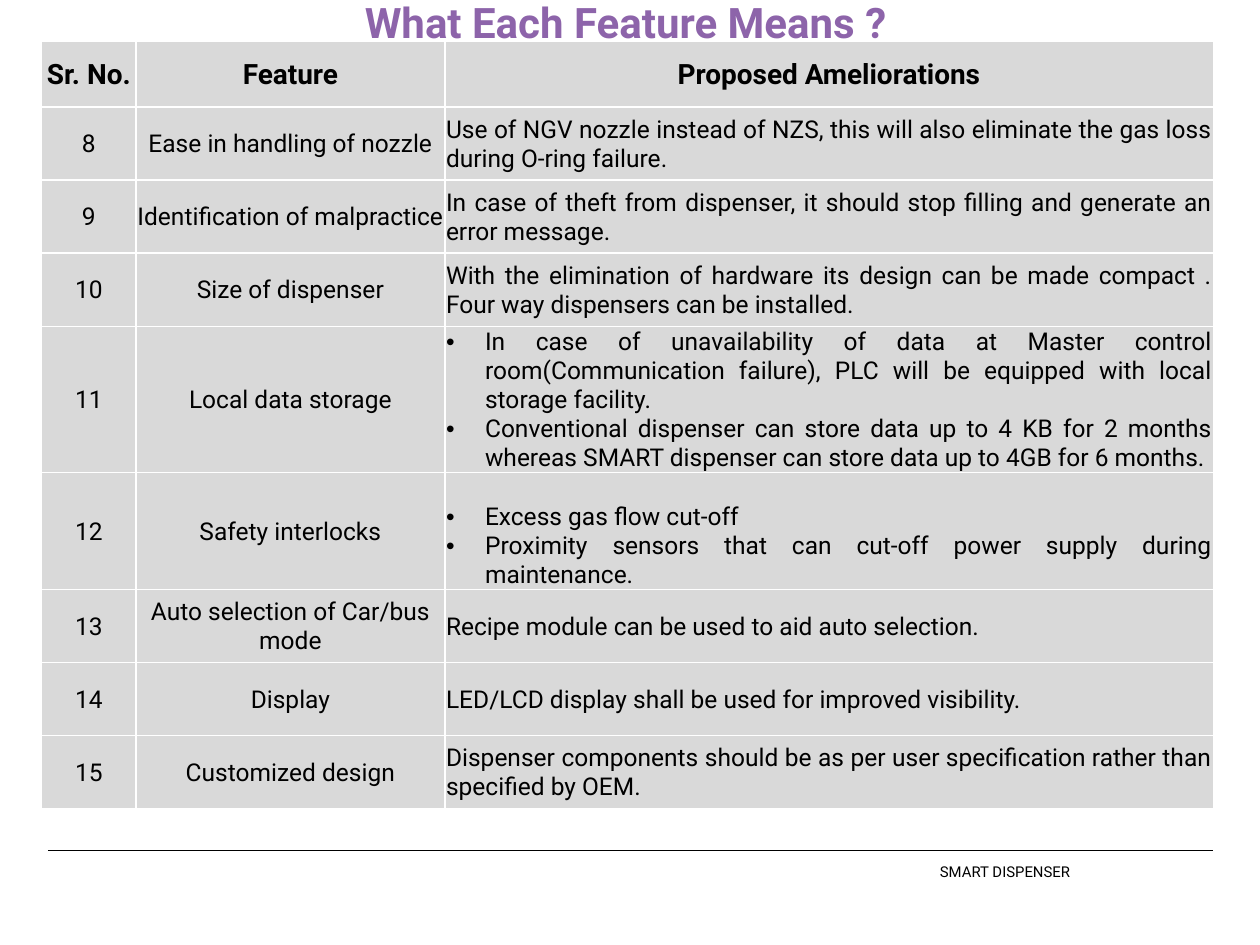
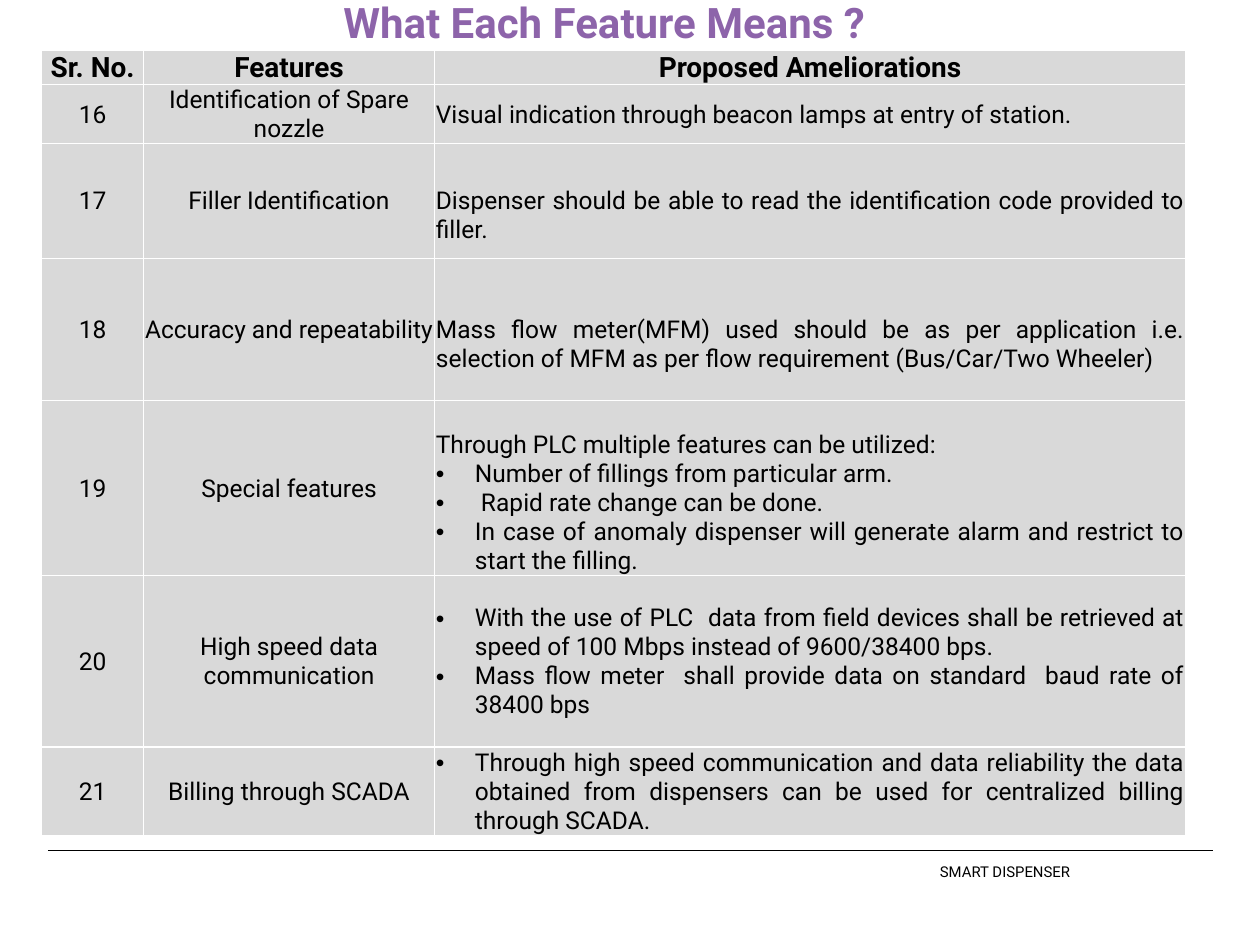
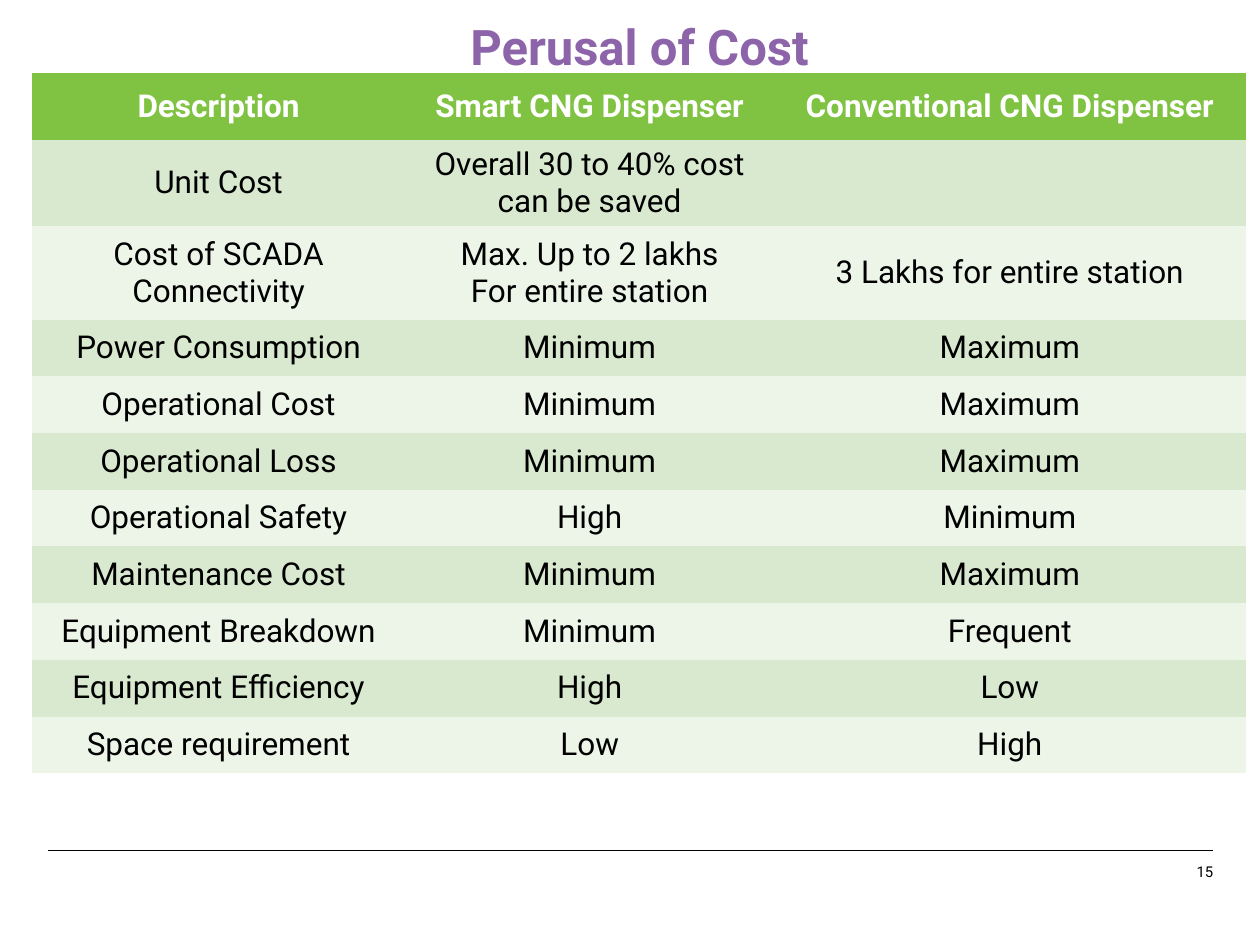
from lxml import etree
from pptx import Presentation
from pptx.dml.color import RGBColor
from pptx.enum import text
from pptx.oxml.ns import qn
from pptx.util import Inches, Pt

FONT = "Roboto"
BLACK, WHITE, PURPLE = "000000", "FFFFFF", "8D64AA"
GREY, GREEN, GREEN_BANDS = "D9D9D9", "80C342", ("D8E9CF", "EDF5E9")
NO_STYLE = "{2D5ABB26-0587-4C30-8999-92F81FD0307C}"
BULLET = "• "
BLANK_LINE = 0.23
CENTER, RIGHT, LEFT = text.PP_ALIGN.CENTER, text.PP_ALIGN.RIGHT, text.PP_ALIGN.LEFT
JUSTIFY = text.PP_ALIGN.JUSTIFY

# Each row: height, number, feature, amelioration, lines the amelioration is lowered by
FEATURES_8_TO_15 = [
    (0.52, "Sr. No.", "Feature", "Proposed Ameliorations", 0),
    (0.58, "8", "Ease in handling of nozzle",
     "Use of NGV nozzle instead of NZS, this will also eliminate the gas loss "
     "during O-ring failure.", 0),
    (0.58, "9", "Identification of malpractice",
     "In case of theft from dispenser, it should stop filling and generate an "
     "error message.", 0),
    (0.58, "10", "Size of dispenser",
     "With the elimination of hardware its design can be made compact . "
     "Four way dispensers can be installed.", 0),
    (1.16, "11", "Local data storage",
     "• In case of unavailability of data at Master control room(Communication "
     "failure), PLC will be equipped with local storage facility.\n"
     "• Conventional dispenser can store data up to 4 KB for 2 months whereas "
     "SMART dispenser can store data up to 4GB for 6 months.", 0),
    (0.93, "12", "Safety interlocks",
     "• Excess gas flow cut-off\n"
     "• Proximity sensors that can cut-off power supply during maintenance.", 1),
    (0.58, "13", "Auto selection of Car/bus mode",
     "Recipe module can be used to aid auto selection.", 0),
    (0.58, "14", "Display",
     "LED/LCD display shall be used for improved visibility.", 0),
    (0.58, "15", "Customized design",
     "Dispenser components should be as per user specification rather than "
     "specified by OEM.", 0),
]
FEATURES_16_TO_21 = [
    (0.27, "Sr. No.", "Features", "Proposed Ameliorations", 0),
    (0.46, "16", "Identification of Spare nozzle",
     "Visual indication through beacon lamps at entry of station.", 0),
    (0.91, "17", "Filler Identification",
     "Dispenser should be able to read the identification code provided to "
     "filler.", 1),
    (1.13, "18", "Accuracy and repeatability",
     "Mass flow meter(MFM) used should be as per application i.e. selection of "
     "MFM as per flow requirement (Bus/Car/Two Wheeler)", 1),
    (1.38, "19", "Special features",
     "Through PLC multiple features can be utilized:\n"
     "• Number of fillings from particular arm.\n"
     "•  Rapid rate change can be done.\n"
     "• In case of anomaly dispenser will generate alarm and restrict to start "
     "the filling.", 1),
    (1.36, "20", "High speed data communication",
     "• With the use of PLC  data from field devices shall be retrieved at "
     "speed of 100 Mbps instead of 9600/38400 bps.\n"
     "• Mass flow meter  shall provide data on standard  baud rate of 38400 bps", 0),
    (0.69, "21", "Billing through SCADA",
     "• Through high speed communication and data reliability the data obtained "
     "from dispensers can be used for centralized billing through SCADA.", 0),
]
COSTS = [
    (0.53, "Description", "Smart CNG Dispenser", "Conventional CNG Dispenser"),
    (0.68, "Unit Cost", "Overall 30 to 40% cost can be saved", ""),
    (0.74, "Cost of SCADA Connectivity", "Max. Up to 2 lakhs\nFor entire station",
     "3 Lakhs for entire station"),
    (0.45, "Power Consumption", "Minimum", "Maximum"),
    (0.45, "Operational Cost", "Minimum", "Maximum"),
    (0.45, "Operational Loss", "Minimum", "Maximum"),
    (0.45, "Operational Safety", "High", "Minimum"),
    (0.45, "Maintenance Cost", "Minimum", "Maximum"),
    (0.45, "Equipment Breakdown", "Minimum", "Frequent"),
    (0.45, "Equipment Efficiency", "High", "Low"),
    (0.45, "Space requirement", "Low", "High"),
]


def rgb(color):
    return RGBColor.from_string(color)


def add_bullet(p):
    pPr = p._p.get_or_add_pPr()
    pPr.set("marL", str(Inches(0.31)))
    pPr.set("indent", str(Inches(-0.31)))
    etree.SubElement(pPr, qn("a:buFont"), typeface="Arial")
    etree.SubElement(pPr, qn("a:buChar"), char=BULLET.strip())


def write(tf, content, size, color=BLACK, bold=False, align=CENTER):
    """Fill a text frame, one paragraph a line; a leading bullet makes a list item."""
    for i, line in enumerate(content.split("\n")):
        p = tf.add_paragraph() if i else tf.paragraphs[0]
        p.alignment = align
        if line.startswith(BULLET):
            add_bullet(p)
            line = line[len(BULLET):]
        r = p.add_run()
        r.text = line
        r.font.name, r.font.size, r.font.bold = FONT, Pt(size), bold
        r.font.color.rgb = rgb(color)


def clear_insets(tf):
    tf.margin_left = tf.margin_right = tf.margin_top = tf.margin_bottom = 0


def set_title(slide, title, left, top, width, height, size):
    sp = slide.shapes.title
    sp.left, sp.top = Inches(left), Inches(top)
    sp.width, sp.height = Inches(width), Inches(height)
    tf = sp.text_frame
    clear_insets(tf)
    tf.auto_size = text.MSO_AUTO_SIZE.NONE
    tf.vertical_anchor = text.MSO_ANCHOR.TOP
    write(tf, title, size, PURPLE, bold=True)


def add_footer(slide, label, left, width, align):
    line = slide.shapes.add_connector(1, Inches(0.38), Inches(6.75), Inches(9.63), Inches(6.75))
    line.line.color.rgb = rgb(BLACK)
    line.line.width = Pt(0.25)
    etree.SubElement(line._element.spPr, qn("a:effectLst"))
    box = slide.shapes.add_textbox(Inches(left), Inches(6.85), Inches(width), Inches(0.14))
    tf = box.text_frame
    clear_insets(tf)
    tf.word_wrap = True
    write(tf, label, 8.5, align=align)


def add_table(slide, left, top, widths, heights):
    frame = slide.shapes.add_table(len(heights), len(widths), Inches(left), Inches(top),
                                   Inches(sum(widths)), Inches(sum(heights)))
    table = frame.table
    table._tbl.tblPr.find(qn("a:tableStyleId")).text = NO_STYLE
    for column, width in zip(table.columns, widths):
        column.width = Inches(width)
    for row, height in zip(table.rows, heights):
        row.height = Inches(height)
    return table


def fill_cell(cell, color):
    cell.fill.solid()
    cell.fill.fore_color.rgb = rgb(color)
    cell.vertical_anchor = text.MSO_ANCHOR.MIDDLE


def add_white_borders(cell):
    tcPr = cell._tc.get_or_add_tcPr()
    for i, side in enumerate(("lnL", "lnR", "lnT", "lnB")):
        ln = etree.Element(qn("a:" + side), w=str(Pt(1)))
        fill = etree.SubElement(ln, qn("a:solidFill"))
        etree.SubElement(fill, qn("a:srgbClr"), val=WHITE)
        tcPr.insert(i, ln)


def add_feature_table(slide, top, widths, rows):
    table = add_table(slide, 0.33, top, widths, [row[0] for row in rows])
    for i, (_, *contents, lowered) in enumerate(rows):
        for j, content in enumerate(contents):
            cell = table.cell(i, j)
            fill_cell(cell, GREY)
            add_white_borders(cell)
            cell.margin_left = cell.margin_right = cell.margin_top = Inches(0.01)
            cell.margin_bottom = 0
            if j == 2:
                cell.margin_top = Inches(0.01 + lowered * BLANK_LINE)
            header = i == 0
            write(cell.text_frame, content, 16 if header else 14, bold=header,
                  align=JUSTIFY if j == 2 and not header else CENTER)


def add_cost_table(slide):
    table = add_table(slide, 0.25, 0.58, (2.97, 2.92, 3.75), [row[0] for row in COSTS])
    for i, (_, *contents) in enumerate(COSTS):
        header = i == 0
        for j, content in enumerate(contents):
            cell = table.cell(i, j)
            fill_cell(cell, GREEN if header else GREEN_BANDS[(i - 1) % 2])
            if content:
                write(cell.text_frame, content, 18, WHITE if header else BLACK, bold=header)


def main():
    prs = Presentation()
    prs.slide_width, prs.slide_height = Inches(10), Inches(7.5)
    title_only = prs.slide_layouts[5]

    feature_slides = [
        (0.63, 0.33, (0.75, 2.45, 6.1), FEATURES_8_TO_15),
        (0.46, 0.4, (0.81, 2.31, 5.96), FEATURES_16_TO_21),
    ]
    for title_left, table_top, widths, rows in feature_slides:
        s = prs.slides.add_slide(title_only)
        set_title(s, "What Each Feature Means ?", title_left, -0.03, 8.67, 0.4, 24)
        add_feature_table(s, table_top, widths, rows)
        add_footer(s, "SMART DISPENSER", 7.46, 1.83, LEFT)

    s = prs.slides.add_slide(title_only)
    set_title(s, "Perusal of Cost", 0.27, 0.13, 9.61, 0.55, 28)
    add_cost_table(s)
    add_footer(s, "15", 9.3, 0.33, RIGHT)

    prs.save("out.pptx")


if __name__ == "__main__":
    main()
